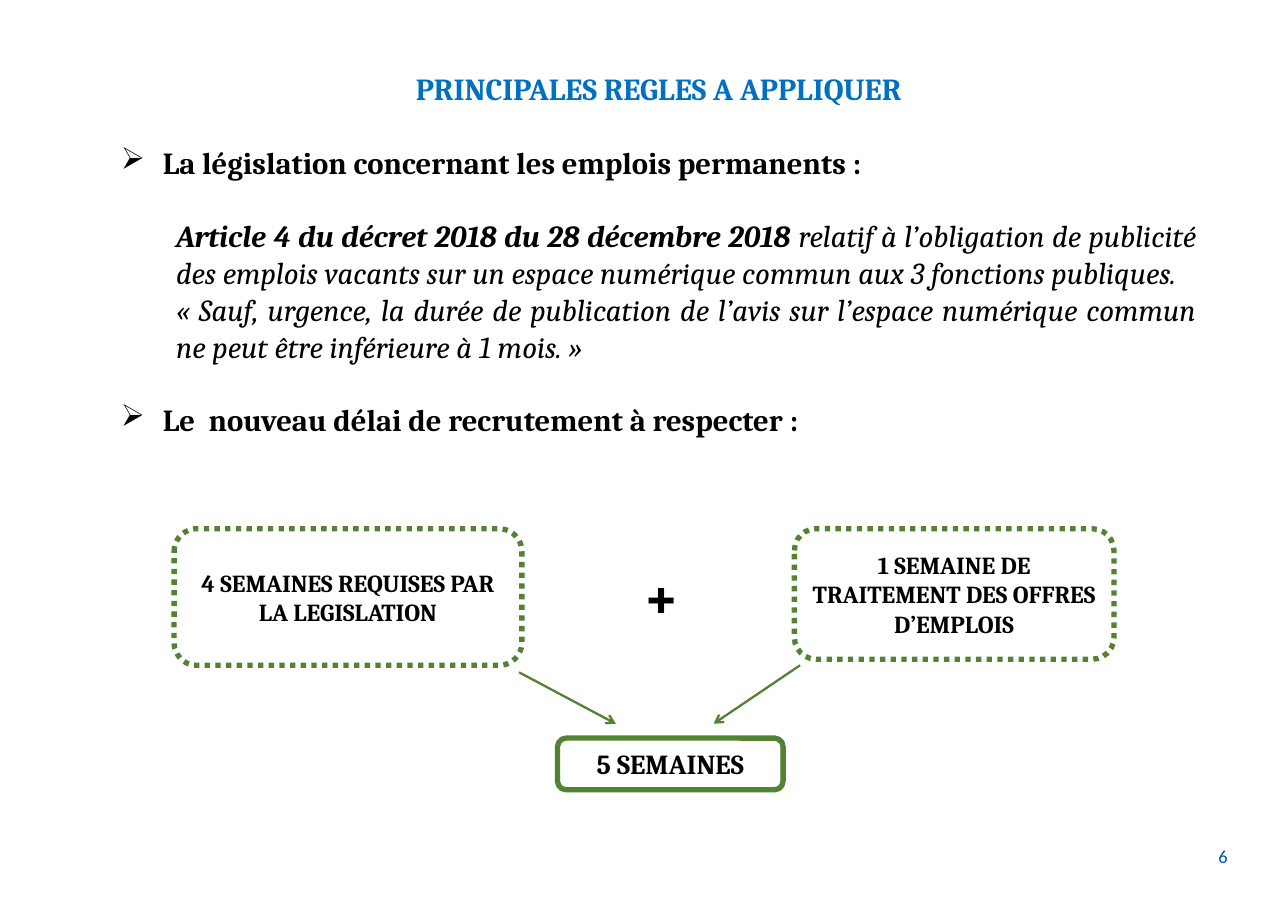
from dataclasses import dataclass
from typing import NamedTuple

from lxml import etree
from pptx import Presentation
from pptx.dml.color import RGBColor
from pptx.enum.dml import MSO_LINE
from pptx.enum.shapes import MSO_CONNECTOR, MSO_SHAPE
from pptx.enum.text import MSO_ANCHOR, PP_ALIGN
from pptx.oxml.ns import qn
from pptx.util import Inches, Pt

ROUNDED = MSO_SHAPE.ROUNDED_RECTANGLE
STRAIGHT = MSO_CONNECTOR.STRAIGHT
DOTTED = MSO_LINE.ROUND_DOT
MIDDLE = MSO_ANCHOR.MIDDLE
LEFT, CENTER, JUSTIFY = PP_ALIGN.LEFT, PP_ALIGN.CENTER, PP_ALIGN.JUSTIFY


@dataclass(frozen=True)
class Theme:
    serif: str = "Cambria"
    sans: str = "Calibri"
    black: RGBColor = RGBColor(0, 0, 0)
    white: RGBColor = RGBColor(255, 255, 255)
    title: RGBColor = RGBColor.from_string("0070C0")
    number: RGBColor = RGBColor.from_string("0053A1")
    green: RGBColor = RGBColor.from_string("548235")
    body_size: int = 20
    number_size: int = 12
    step_size: int = 16
    total_size: int = 18
    plus_size: int = 40
    border: float = 3.5
    arrow: float = 1.5
    gap: int = 24


THEME = Theme()


class Box(NamedTuple):
    left: int
    top: int
    width: int
    height: int

    def point(self, across, down):
        return (round(self.left + self.width * across / 100),
                round(self.top + self.height * down / 100))

    def area(self, across, down, width, height):
        return Box(*self.point(across, down),
                   round(self.width * width / 100), round(self.height * height / 100))


def write(para, text, *, size, font=THEME.serif, color=THEME.black,
          bold=False, italic=False, align=LEFT, before=0):
    para.alignment = align
    para.space_before = Pt(before)
    span = para.add_run()
    span.text = text
    span.font.name = font
    span.font.size = Pt(size)
    span.font.bold = bold
    span.font.italic = italic
    span.font.color.rgb = color


def indent(para, margin, bullet=None):
    properties = para._p.get_or_add_pPr()
    properties.set("marL", str(Inches(margin)))
    properties.set("indent", str(Inches(-margin if bullet else 0)))
    if bullet:
        etree.SubElement(properties, qn("a:buChar")).set("char", bullet)


def add_text(page, box):
    frame = page.shapes.add_textbox(*box).text_frame
    frame.word_wrap = True
    return frame


def add_frame(page, box, text, size, dash=None):
    shape = page.shapes.add_shape(ROUNDED, *box)
    shape.shadow.inherit = False
    shape.fill.solid()
    shape.fill.fore_color.rgb = THEME.white
    shape.line.color.rgb = THEME.green
    shape.line.width = Pt(THEME.border)
    if dash:
        shape.line.dash_style = dash
    frame = shape.text_frame
    frame.word_wrap = True
    frame.vertical_anchor = MIDDLE
    write(frame.paragraphs[0], text, size=size, bold=True, align=CENTER)


def add_arrow(page, start, end):
    arrow = page.shapes.add_connector(STRAIGHT, *start, *end)
    arrow.line.color.rgb = THEME.green
    arrow.line.width = Pt(THEME.arrow)
    outline = arrow._element.spPr.find(qn("a:ln"))
    etree.SubElement(outline, qn("a:tailEnd")).set("type", "arrow")
    etree.SubElement(arrow._element.spPr, qn("a:effectLst"))


def add_rules(page, box):
    frame = add_text(page, box)
    size, gap = THEME.body_size, THEME.gap

    def add_heading(text):
        para = frame.add_paragraph()
        indent(para, 0.38, "➢")
        write(para, text, size=size, bold=True, before=gap)

    def add_quote(*spans, before=0):
        para = frame.add_paragraph()
        indent(para, 0.5)
        for text, bold in spans:
            write(para, text, size=size, bold=bold, italic=True,
                  align=JUSTIFY, before=before)

    write(frame.paragraphs[0], "PRINCIPALES REGLES A APPLIQUER", size=size,
          color=THEME.title, bold=True, align=CENTER)
    add_heading("La législation concernant les emplois permanents :")
    add_quote(("Article 4 du décret 2018 du 28 décembre 2018 ", True),
              ("relatif à l’obligation de publicité des emplois vacants sur un "
               "espace numérique commun aux 3 fonctions publiques.", False), before=gap)
    add_quote(("« Sauf, urgence, la durée de publication de l’avis sur l’espace "
               "numérique commun ne peut être inférieure à 1 mois. »", False))
    add_heading("Le  nouveau délai de recrutement à respecter :")


def add_delay(page, box):
    add_frame(page, box.area(66, 0, 34, 50),
              "1 SEMAINE DE TRAITEMENT DES OFFRES D’EMPLOIS", THEME.step_size, DOTTED)
    add_frame(page, box.area(0, 0, 37, 52.3),
              "4 SEMAINES REQUISES PAR LA LEGISLATION", THEME.step_size, DOTTED)
    plus = add_text(page, box.area(48.8, 8.9, 7, 32.5))
    write(plus.paragraphs[0], "+", size=THEME.plus_size, bold=True)
    add_arrow(page, box.point(36.7, 55), box.point(47, 74.7))
    add_arrow(page, box.point(66.6, 52.3), box.point(57.4, 74.7))
    add_frame(page, box.area(40.8, 80.2, 24, 19.8), "5 SEMAINES", THEME.total_size)


def add_number(page, box):
    frame = add_text(page, box)
    write(frame.paragraphs[0], "6", size=THEME.number_size, font=THEME.sans,
          color=THEME.number)


def main():
    deck = Presentation()
    deck.slide_width, deck.slide_height = Inches(11.69), Inches(8.27)
    page = deck.slides.add_slide(deck.slide_layouts[6])
    whole = Box(0, 0, deck.slide_width, deck.slide_height)
    add_number(page, whole.area(93.76, 92.14, 5.5, 5.3))
    add_rules(page, whole.area(8.55, 7.13, 85.2, 45.95))
    add_delay(page, whole.area(13.52, 58.04, 72.97, 28.66))
    deck.save("out.pptx")


if __name__ == "__main__":
    main()
